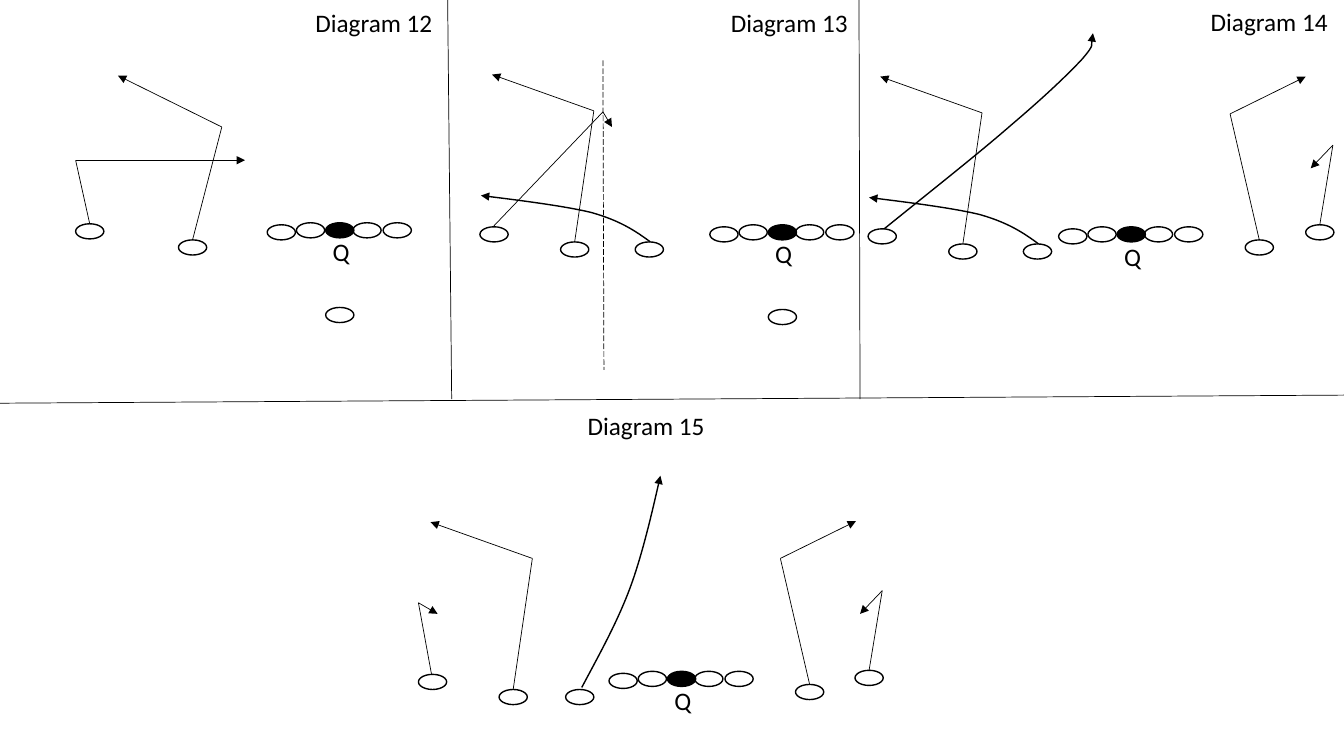
from lxml import etree
from pptx import Presentation
from pptx.dml.color import RGBColor
from pptx.enum.dml import MSO_LINE
from pptx.enum.shapes import MSO_CONNECTOR, MSO_SHAPE
from pptx.enum.text import MSO_AUTO_SIZE
from pptx.oxml.ns import qn
from pptx.util import Cm, Pt

BLACK = RGBColor(0, 0, 0)
OVAL = MSO_SHAPE.OVAL
STRAIGHT = MSO_CONNECTOR.STRAIGHT
DASH = MSO_LINE.LONG_DASH
FIT = MSO_AUTO_SIZE.SHAPE_TO_FIT_TEXT
INCH = 2.54

BLOCK = [(-0.58, 0.02), (-0.29, 0), (0.27, 0), (0.57, 0)]

OUT = [(0.14, 0), (0.43, -1.12), (-0.6, -1.63)]
CROSS = [(0.14, 0), (0, -0.63), (1.68, -0.63)]
CORNER = [(0.14, 0), (0.33, -1.3), (-0.68, -1.66)]
FLAG = [(0.14, 0), (-0.15, -1.25), (0.6, -1.62)]
HOOK = [(0.14, 0), (0.27, -0.79), (0.05, -0.56)]
SLANT = [(0.13, 0), (1.22, -1.14), (1.31, -0.99)]
CURL = [(0.13, 0), (0, -0.71), (0.19, -0.6)]
FLAT = [(0.15, 0), (0, -0.11), (-0.15, -0.21), (-0.43, -0.29),
        (-0.71, -0.36), (-1.53, -0.46), (-1.53, -0.46)]
WHEEL = [(0.16, 0), (0.63, -0.38), (1.1, -0.75), (1.42, -1.03),
         (1.75, -1.31), (1.98, -1.53), (2.12, -1.68),
         (2.25, -1.83), (2.21, -1.89), (2.23, -1.94)]
SEAM = [(0.16, -0.02), (0.33, -0.34), (0.51, -0.66), (0.64, -1.01),
        (0.77, -1.36), (0.94, -2.12), (0.94, -2.12)]
CURVES = (FLAT, WHEEL, SEAM)

PLAYS = [
    ("Diagram 12", (3.03, 0.02), (3.23, 2.21),
     [(1.77, 2.38, OUT), (0.75, 2.22, CROSS), (3.23, 3.05, None)]),
    ("Diagram 13", (7.15, 0.02), (7.62, 2.23),
     [(5.56, 2.4, CORNER), (4.76, 2.25, SLANT), (6.3, 2.4, FLAT),
      (7.62, 3.07, None)]),
    ("Diagram 14", (11.91, 0.01), (11.08, 2.25),
     [(9.41, 2.42, CORNER), (8.61, 2.27, WHEEL), (10.15, 2.42, FLAT),
      (12.35, 2.38, FLAG), (12.95, 2.23, HOOK)]),
    ("Diagram 15", (5.73, 4.02), (6.62, 6.66),
     [(4.95, 6.84, CORNER), (4.15, 6.69, CURL), (5.61, 6.84, SEAM),
      (7.89, 6.79, FLAG), (8.48, 6.65, HOOK)]),
]
BORDERS = [((4.44, 0), (4.48, 3.96)), ((8.52, 0), (8.53, 3.96)),
           ((0, 4), (13.33, 3.92))]


def scale(*sizes):
    """Turn inches into lengths."""
    return [Cm(size * INCH) for size in sizes]


def ink(shape, width):
    """Give a shape a black line."""
    shape.line.color.rgb = BLACK
    shape.line.width = Pt(width)


def point(shape):
    """Put an arrowhead at the end of a line."""
    line = shape.line._get_or_add_ln()
    etree.SubElement(line, qn("a:tailEnd"), type="triangle")


def draw_line(shapes, start, end, arrow=False, dash=None):
    """Draw a thin straight line."""
    line = shapes.add_connector(STRAIGHT, *scale(*start, *end))
    ink(line, 0.5)
    if dash:
        line.line.dash_style = dash
    if arrow:
        point(line)
    etree.SubElement(line._element.spPr, qn("a:effectLst"))


def draw_curve(shapes, points):
    """Draw an arrow through groups of three Bézier points."""
    first, *rest = [scale(*spot) for spot in points]
    pen = shapes.build_freeform(*first)
    pen.add_line_segments(rest, close=False)
    curve = pen.convert_to_shape()
    curve.shadow.inherit = False
    curve.fill.background()
    ink(curve, 1)
    point(curve)
    steps = list(curve._element.iter(qn("a:lnTo")))
    for i in range(0, len(steps), 3):
        bend = etree.Element(qn("a:cubicBezTo"))
        steps[i].addprevious(bend)
        for step in steps[i:i + 3]:
            bend.append(step[0])
            step.getparent().remove(step)


def draw_man(shapes, left, top, solid=False):
    """Draw one player."""
    man = shapes.add_shape(OVAL, *scale(left, top, 0.28, 0.15))
    man.shadow.inherit = False
    if solid:
        man.fill.solid()
        man.fill.fore_color.rgb = BLACK
    else:
        man.fill.background()
    ink(man, 1)


def write(shapes, text, left, top, width):
    """Write a label."""
    frame = shapes.add_textbox(*scale(left, top, width, 0.4)).text_frame
    frame.word_wrap = False
    frame.auto_size = FIT
    frame.text = text
    font = frame.paragraphs[0].runs[0].font
    font.name = "Calibri"
    font.size = Pt(18)
    font.color.rgb = BLACK


def draw_route(shapes, left, top, route):
    """Draw the path a player runs."""
    points = [(left + x, top + y) for x, y in route]
    if route in CURVES:
        draw_curve(shapes, points)
        return
    start, turn, end = points
    draw_line(shapes, start, turn)
    draw_line(shapes, turn, end, arrow=True)


def draw_play(shapes, title, label, center, men):
    """Draw one diagram."""
    left, top = center
    write(shapes, title, *label, 1.37)
    draw_man(shapes, left, top, solid=True)
    for x, y in BLOCK:
        draw_man(shapes, left + x, top + y)
    write(shapes, "Q", left - 0.03, top + 0.09, 0.37)
    for x, y, route in men:
        draw_man(shapes, x, y)
        if route:
            draw_route(shapes, x, y, route)


def main():
    """Build the slide."""
    deck = Presentation()
    deck.slide_width, deck.slide_height = scale(13.33, 7.5)
    shapes = deck.slides.add_slide(deck.slide_layouts[6]).shapes
    for start, end in BORDERS:
        draw_line(shapes, start, end)
    for play in PLAYS:
        draw_play(shapes, *play)
    draw_line(shapes, (5.98, 0.6), (5.99, 3.67), dash=DASH)
    deck.save("out.pptx")


if __name__ == "__main__":
    main()
